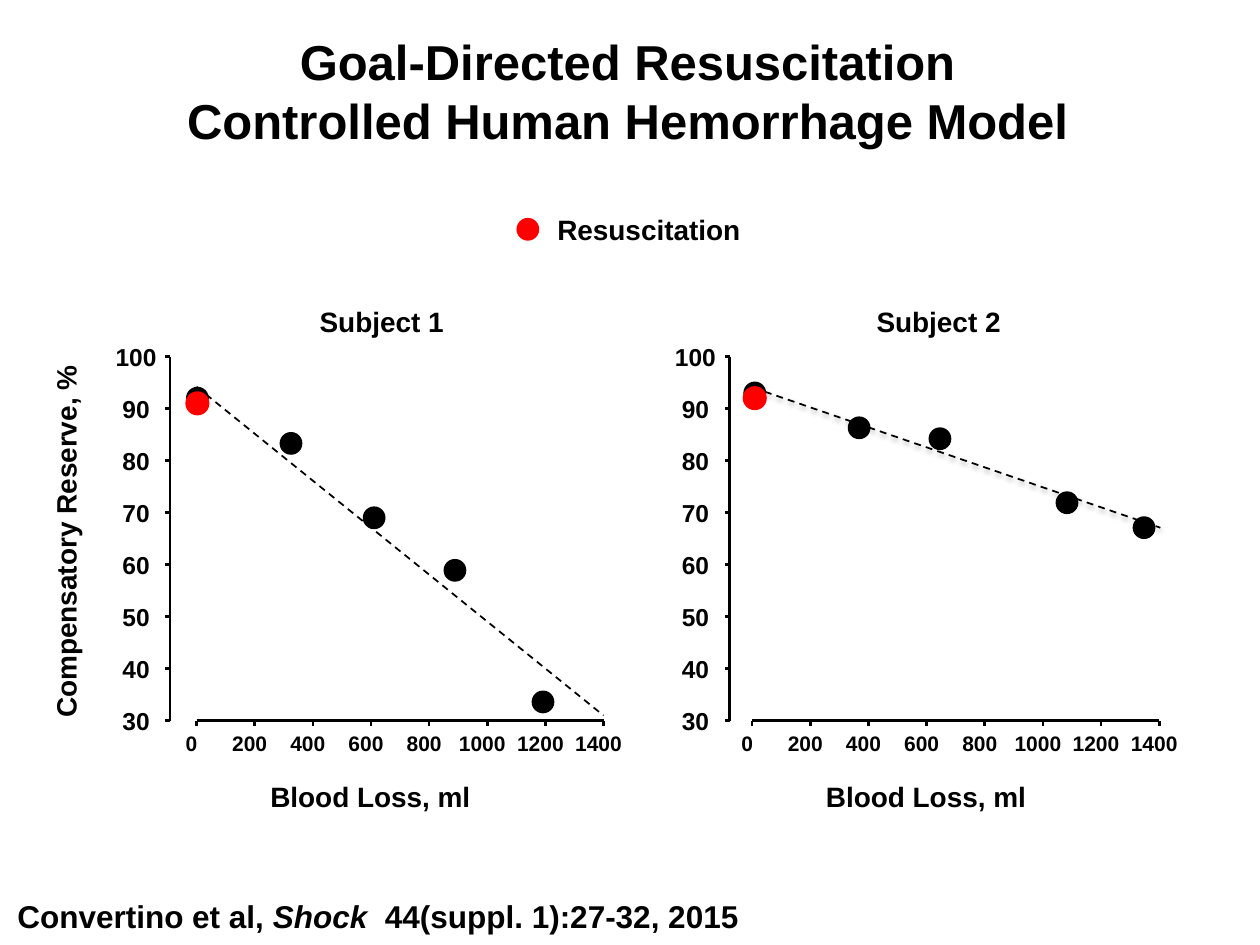
from dataclasses import dataclass

from lxml.etree import SubElement
from pptx import Presentation
from pptx.dml.color import RGBColor
from pptx.enum.dml import MSO_LINE
from pptx.enum.shapes import MSO_CONNECTOR, MSO_SHAPE
from pptx.enum.text import MSO_ANCHOR, PP_ALIGN as Align
from pptx.oxml.ns import qn
from pptx.util import Inches, Pt


@dataclass(frozen=True)
class Theme:
    font: str = "Arial"
    ink: RGBColor = RGBColor(0, 0, 0)
    accent: RGBColor = RGBColor(255, 0, 0)
    title: int = 28
    citation: int = 18
    label: int = 16
    y_tick: int = 14
    x_tick: int = 12
    axis_line: float = 1.5
    trend_line: float = 1
    accent_line: float = 2.25


THEME = Theme()

TITLE = ["Goal-Directed Resuscitation", "Controlled Human Hemorrhage Model"]
# Each run is (wording, italic)
CITATION = [("Convertino et al, ", False), ("Shock", True), ("  44(suppl. 1):27-32, 2015", False)]
X_TITLE, Y_TITLE, LEGEND = "Blood Loss, ml", "Compensatory Reserve, %", "Resuscitation"
X_TICKS = range(0, 1401, 200)
Y_TICKS = range(30, 101, 10)

# Points are (blood loss in ml, compensatory reserve in %)
PANELS = [
    {
        "name": "Subject 1", "name_center": 3.03, "y_axis": 1.35, "origin": 1.56,
        "points": [(325, 83.3), (611, 69), (889, 58.9), (1192, 33.6), (3, 92)],
        "resuscitation": (3, 91),
        "trend": [(0, 94.2), (1400, 31)],
        "trend_shadow": False,
    },
    {
        "name": "Subject 2", "name_center": 7.45, "y_axis": 5.79, "origin": 5.97,
        "points": [(368, 86.3), (646, 84.2), (1083, 71.9), (1348, 67.1), (9, 93)],
        "resuscitation": (9, 92),
        "trend": [(4, 94), (1404, 67.1)],
        "trend_shadow": True,
    },
]

AXIS_TOP, AXIS_BOTTOM, X_LENGTH = 2.83, 5.72, 3.23
TICK = 0.04
DOT = 0.16


def add_text(slide, box, paragraphs, size, align=Align.CENTER, inset=0, wrap=False):
    """Write paragraphs, each a list of (wording, italic) runs, in a box in inches."""
    shape = slide.shapes.add_textbox(*map(Inches, box))
    frame = shape.text_frame
    frame.word_wrap = wrap
    frame.vertical_anchor = MSO_ANCHOR.TOP
    frame.margin_left = frame.margin_right = Inches(inset)
    frame.margin_top = frame.margin_bottom = Inches(inset / 2)
    for index, runs in enumerate(paragraphs):
        paragraph = frame.add_paragraph() if index else frame.paragraphs[0]
        paragraph.alignment = align
        for wording, italic in runs:
            run = paragraph.add_run()
            run.text = wording
            run.font.name = THEME.font
            run.font.size = Pt(size)
            run.font.bold = True
            run.font.italic = italic
            run.font.color.rgb = THEME.ink
    return shape


def add_label(slide, center_x, center_y, width, wording, size):
    height = size / 60
    box = (center_x - width / 2, center_y - height / 2, width, height)
    return add_text(slide, box, [[(wording, False)]], size)


def add_line(slide, start, end, width=THEME.axis_line, dashed=False, shadow=False):
    line = slide.shapes.add_connector(MSO_CONNECTOR.STRAIGHT, *map(Inches, (*start, *end)))
    line.line.color.rgb = THEME.ink
    line.line.width = Pt(width)
    if dashed:
        line.line.dash_style = MSO_LINE.DASH
    effects = SubElement(line._element.spPr, qn("a:effectLst"))
    if shadow:
        outer = SubElement(effects, qn("a:outerShdw"), blurRad=str(Pt(3.1)),
                           dist=str(Pt(1.6)), dir="5400000", rotWithShape="0")
        color = SubElement(outer, qn("a:srgbClr"), val=str(THEME.ink))
        SubElement(color, qn("a:alpha"), val="38000")


def add_dot(slide, center, color=THEME.ink, line_width=THEME.axis_line):
    left, top = (value - DOT / 2 for value in center)
    dot = slide.shapes.add_shape(MSO_SHAPE.OVAL, *map(Inches, (left, top, DOT, DOT)))
    dot.shadow.inherit = False
    dot.fill.solid()
    dot.fill.fore_color.rgb = color
    dot.line.color.rgb = color
    dot.line.width = Pt(line_width)


def add_panel(slide, panel):
    axis, origin = panel["y_axis"], panel["origin"]

    def place(point):
        """Turn (ml, %) into inches on the slide."""
        loss, reserve = point
        share = (reserve - Y_TICKS[0]) / (Y_TICKS[-1] - Y_TICKS[0])
        return (origin + loss / X_TICKS[-1] * X_LENGTH,
                AXIS_BOTTOM - share * (AXIS_BOTTOM - AXIS_TOP))

    for value in Y_TICKS:
        y = place((0, value))[1]
        add_label(slide, axis - 0.27, y, 0.11 * len(str(value)), str(value), THEME.y_tick)
        add_line(slide, (axis, y), (axis - TICK, y))
    add_line(slide, (axis, AXIS_BOTTOM), (axis, AXIS_TOP))

    for value in X_TICKS:
        x = place((value, 0))[0]
        add_label(slide, x - 0.04, 5.9, 0.093 * len(str(value)), str(value), THEME.x_tick)
        add_line(slide, (x, AXIS_BOTTOM + TICK), (x, AXIS_BOTTOM))
    add_line(slide, (origin, AXIS_BOTTOM), (origin + X_LENGTH, AXIS_BOTTOM))

    add_label(slide, panel["name_center"], 2.55, 1, panel["name"], THEME.label)
    add_label(slide, origin + 1.38, 6.32, 1.61, X_TITLE, THEME.label)
    add_line(slide, *map(place, panel["trend"]), THEME.trend_line, True, panel["trend_shadow"])
    for point in panel["points"]:
        add_dot(slide, place(point))
    add_dot(slide, place(panel["resuscitation"]), THEME.accent, THEME.accent_line)


def main():
    presentation = Presentation()
    presentation.slide_width, presentation.slide_height = Inches(10), Inches(7.5)
    slide = presentation.slides.add_slide(presentation.slide_layouts[6])

    title = [[(line, False)] for line in TITLE]
    add_text(slide, (0.64, 0.2, 8.68, 1.04), title, THEME.title, inset=0.1, wrap=True)
    add_dot(slide, (4.19, 1.82), THEME.accent)
    add_label(slide, 5.15, 1.82, 1.47, LEGEND, THEME.label)
    add_label(slide, 0.52, 4.3, 2.85, Y_TITLE, THEME.label).rotation = 270
    for panel in PANELS:
        add_panel(slide, panel)
    citation = add_text(slide, (0.04, 7.14, 6.07, 0.34), [CITATION], THEME.citation,
                        Align.LEFT, inset=0.1, wrap=True)
    citation.text_frame.paragraphs[0].line_spacing = 0.75

    presentation.save("out.pptx")


if __name__ == "__main__":
    main()
